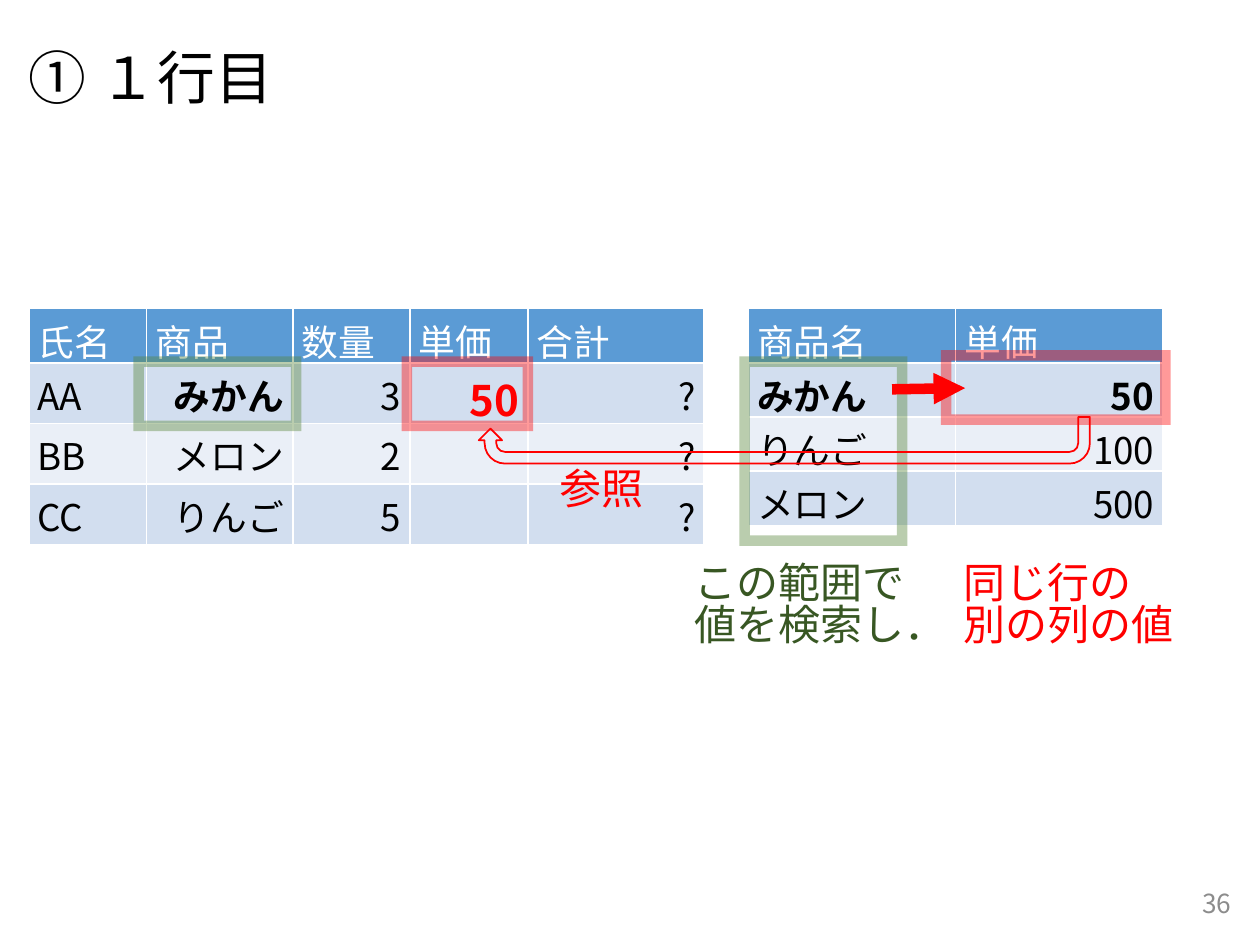
from pptx import Presentation
from pptx.dml.color import RGBColor
from pptx.enum.shapes import MSO_CONNECTOR, MSO_SHAPE
from pptx.enum.text import MSO_ANCHOR, MSO_AUTO_SIZE, PP_ALIGN
from pptx.oxml.ns import qn
from pptx.oxml.xmlchemy import OxmlElement
from pptx.util import Inches, Pt

LEFT, RIGHT = PP_ALIGN.LEFT, PP_ALIGN.RIGHT
MIDDLE = MSO_ANCHOR.MIDDLE
FIT_TEXT = MSO_AUTO_SIZE.SHAPE_TO_FIT_TEXT
RECT, UTURN = MSO_SHAPE.RECTANGLE, MSO_SHAPE.U_TURN_ARROW
STRAIGHT = MSO_CONNECTOR.STRAIGHT

BLACK = RGBColor(0x00, 0x00, 0x00)
WHITE = RGBColor(0xFF, 0xFF, 0xFF)
GREY = RGBColor(0x8C, 0x8C, 0x8C)
RED = RGBColor(0xFF, 0x00, 0x00)
GREEN = RGBColor(0x54, 0x82, 0x35)
DARK_GREEN = RGBColor(0x38, 0x57, 0x23)
HEADER = RGBColor(0x5B, 0x9B, 0xD5)
BANDS = (RGBColor(0xEA, 0xEF, 0xF7), RGBColor(0xD2, 0xDE, 0xEF))

SANS, TITLE_FONT = "Noto Sans CJK JP", "Cabin"
CELL_SIZE, NOTE_SIZE = 21, 24
CELL_MARGINS = {"margin_left": Inches(0.07), "margin_right": Inches(0.07),
                "margin_top": Inches(0.04), "margin_bottom": Inches(0.04)}


def add_xml(parent, tag, **attributes):
    child = OxmlElement(tag)
    for name, value in attributes.items():
        child.set(name, value)
    parent.append(child)
    return child


class SlideBuilder:
    """Places elements on a grid of 100 columns by 75 rows."""

    def __init__(self, prs):
        self.unit_x, self.unit_y = prs.slide_width / 100, prs.slide_height / 75
        self.s = prs.slides.add_slide(prs.slide_layouts[5])

    def x(self, columns):
        return round(columns * self.unit_x)

    def y(self, rows):
        return round(rows * self.unit_y)

    def box(self, left, top, width, height):
        return self.x(left), self.y(top), self.x(width), self.y(height)

    def add_text(self, p, text, size, color, align=LEFT, bold=False, font=SANS):
        p.alignment = align
        r = p.add_run()
        r.text = text
        r.font.color.rgb = color
        for name, value in {"size": Pt(size), "bold": bold, "name": font}.items():
            setattr(r.font, name, value)
        add_xml(r.font._element, "a:ea", typeface=SANS)

    def title(self, text, box):
        sp = self.s.shapes.title
        sp.left, sp.top, sp.width, sp.height = self.box(*box)
        sp.text_frame.vertical_anchor = MIDDLE
        p = sp.text_frame.paragraphs[0]
        p.line_spacing = 0.9
        self.add_text(p, text, 33, BLACK, font=TITLE_FONT)

    def page_number(self, text, box):
        tf = self.s.shapes.add_textbox(*self.box(*box)).text_frame
        tf.word_wrap, tf.vertical_anchor = True, MIDDLE
        self.add_text(tf.paragraphs[0], text, 15, GREY, RIGHT)

    def note(self, lines, box, color):
        tf = self.s.shapes.add_textbox(*self.box(*box)).text_frame
        tf.word_wrap, tf.auto_size = False, FIT_TEXT
        for i, line in enumerate(lines):
            p = tf.add_paragraph() if i else tf.paragraphs[0]
            p.line_spacing = 0.82
            self.add_text(p, line, NOTE_SIZE, color)

    def table(self, rows, left, top, widths, heights, special):
        """special maps (row, column) to the format of a highlighted cell."""
        box = self.box(left, top, sum(widths), sum(heights))
        table = self.s.shapes.add_table(len(rows), len(widths), *box).table
        for column, width in zip(table.columns, widths):
            column.width = self.x(width)
        for row, height in zip(table.rows, heights):
            row.height = self.y(height)
        for i, row in enumerate(rows):
            for j, text in enumerate(row):
                cell = table.cell(i, j)
                for name, value in CELL_MARGINS.items():
                    setattr(cell, name, value)
                cell.fill.solid()
                cell.fill.fore_color.rgb = BANDS[i % 2] if i else HEADER
                p = cell.text_frame.paragraphs[0]
                if text:
                    style = {"size": CELL_SIZE, "color": BLACK if i else WHITE,
                             "align": RIGHT if i and j else LEFT}
                    self.add_text(p, text, **{**style, **special.get((i, j), {})})
                else:
                    add_xml(p._p, "a:endParaRPr", sz=str(NOTE_SIZE * 100))

    def outline(self, kind, box, color, width):
        sp = self.s.shapes.add_shape(kind, *self.box(*box))
        sp.shadow.inherit = False
        sp.fill.background()
        sp.line.color.rgb, sp.line.width = color, Pt(width)
        return sp

    def frame(self, box, color):
        ln = self.outline(RECT, box, color, 6).line._get_or_add_ln()
        add_xml(ln.find(".//" + qn("a:srgbClr")), "a:alpha", val="40000")
        add_xml(ln, "a:miter", lim="800000")

    def return_arrow(self, box, color):
        xfrm = self.outline(UTURN, box, color, 1)._element.spPr.find(qn("a:xfrm"))
        xfrm.set("flipH", "1")
        xfrm.set("flipV", "1")

    def arrow(self, start, end, color):
        line = self.s.shapes.add_connector(
            STRAIGHT, self.x(start[0]), self.y(start[1]), self.x(end[0]), self.y(end[1]))
        line.line.color.rgb, line.line.width = color, Pt(6)
        add_xml(line.line._get_or_add_ln(), "a:tailEnd", type="triangle")
        add_xml(line._element.spPr, "a:effectLst")


def main():
    prs = Presentation()
    prs.slide_width, prs.slide_height = Inches(10), Inches(7.5)
    slide = SlideBuilder(prs)

    slide.title("① １行目", (1.3, 2.1, 96.5, 8.6))
    slide.page_number("36", (76.2, 69.7, 22.5, 4))

    # Price list and order table
    bold = {"bold": True}
    slide.table([["商品名", "単価"], ["みかん", "50"], ["りんご", "100"], ["メロン", "500"]],
                59.4, 24.5, [16.45] * 2, [4.2] * 4, {(1, 0): bold, (1, 1): bold})
    slide.table([["氏名", "商品", "数量", "単価", "合計"],
                 ["AA", "みかん", "3", "50", "?"],
                 ["BB", "メロン", "2", "", "?"],
                 ["CC", "りんご", "5", "", "?"]],
                2.3, 24.5, [9.35, 11.6, 9.3, 9.35, 14], [4.2] + [4.7] * 3,
                {(1, 1): bold, (1, 3): {"bold": True, "size": NOTE_SIZE, "color": RED}})

    # Highlight frames: prices in red, products in green
    slide.frame((75.1, 28.2, 17.4, 5.1), RED)
    slide.frame((32.3, 28.7, 9.6, 5.1), RED)
    slide.frame((11, 28.7, 12.5, 5.1), GREEN)
    slide.frame((59.1, 28.7, 12.5, 14.2), GREEN)

    # Lookup arrows
    slide.arrow((70.8, 30.9), (76.6, 30.8), RED)
    slide.return_arrow((38, 33.1, 48.5, 3.7), RED)

    # Explanations
    slide.note(["この範囲で", "値を検索し．"], (54.1, 44.4, 22.2, 9.1), DARK_GREEN)
    slide.note(["同じ行の", "別の列の値"], (75.5, 44.4, 18.8, 9.1), RED)
    slide.note(["参照"], (43.4, 36.9, 8.8, 5), RED)

    prs.save("out.pptx")


if __name__ == "__main__":
    main()
